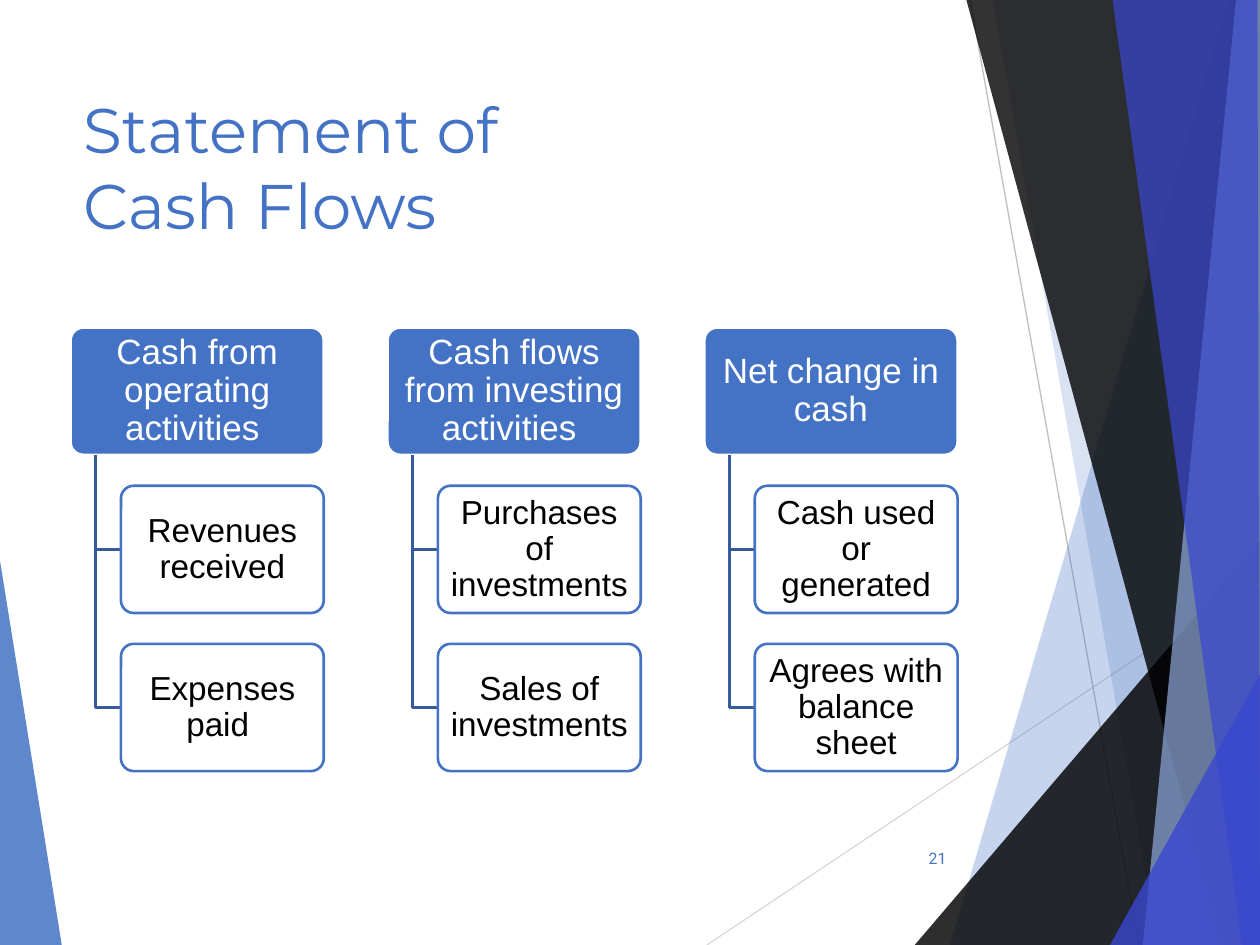
from lxml.etree import SubElement
from pptx import Presentation
from pptx.dml.color import RGBColor
from pptx.enum.shapes import MSO_SHAPE
from pptx.enum.text import MSO_ANCHOR, MSO_AUTO_SIZE, PP_ALIGN
from pptx.oxml.ns import qn
from pptx.util import Inches, Pt

COLORS = {
    "blue": "4472C4", "branch": "365B9D", "pale": "8FAADC", "indigo": "3947CF",
    "black": "000000", "white": "FFFFFF", "gray": "BFBFBF", "light_gray": "D9D9D9",
}

RAYS = [
    (Inches(5.61), Inches(7.5), Inches(10), Inches(4.57), "light_gray"),
    (Inches(7.7), Inches(0), Inches(9.04), Inches(7.5), "gray"),
]

# Corner points in inches, colour and opacity in percent, back to front
FACETS = [
    ([(9.75, 0), (7.54, 7.5), (10, 7.5), (10, 0)], "blue", 30),
    ([(7.88, 0), (9.19, 7.5), (10, 7.5), (10, 0)], "blue", 20),
    ([(7.26, 7.5), (10, 4.29), (10, 7.5)], "black", 82),
    ([(7.67, 0), (9.7, 7.5), (10, 7.5), (10, 0)], "black", 80),
    ([(9.81, 0), (9.07, 7.5), (10, 7.5), (10, 0)], "pale", 70),
    ([(8.83, 0), (9.86, 7.5), (10, 7.5), (9.98, 0)], "indigo", 70),
    ([(8.81, 7.5), (10, 5.35), (10, 7.5)], "indigo", 80),
]
LEFT_FACET = ([(0, 4.45), (0.49, 7.5), (0, 7.5)], "blue", 85)

CASH_FLOWS = [
    ("Cash from operating activities ", ["Revenues received", "Expenses paid "]),
    ("Cash flows from investing activities ",
     ["Purchases of investments", "Sales of investments"]),
    ("Net change in cash", ["Cash used or generated", "Agrees with balance sheet"]),
]


def rgb(name):
    return RGBColor.from_string(COLORS[name])


def fill_solid(shape, color, opacity=100):
    shape.fill.solid()
    shape.fill.fore_color.rgb = rgb(color)
    if opacity < 100:
        srgb = shape.fill._xPr.find(qn("a:solidFill")).find(qn("a:srgbClr"))
        SubElement(srgb, qn("a:alpha")).set("val", str(opacity * 1000))


def set_line(shape, color, width):
    shape.line.color.rgb = rgb(color)
    shape.line.width = Pt(width)


def format_text(paragraph, font_name, size, color, alignment):
    paragraph.alignment = alignment
    for run in paragraph.runs:
        run.font.name = font_name
        run.font.size = Pt(size)
        run.font.color.rgb = rgb(color)


def add_outline(slide, points, close):
    """Add a straight-sided outline through points given as lengths."""
    builder = slide.shapes.build_freeform(*points[0], scale=1.0)
    builder.add_line_segments(points[1:], close=close)
    outline = builder.convert_to_shape()
    outline.shadow.inherit = False
    return outline


def add_facet(slide, corners, color, opacity):
    facet = add_outline(slide, [(Inches(x), Inches(y)) for x, y in corners], True)
    fill_solid(facet, color, opacity)
    facet.line.fill.background()


def add_backdrop(slide):
    add_facet(slide, *LEFT_FACET)
    for x1, y1, x2, y2, color in RAYS:
        ray = slide.shapes.add_connector(1, x1, y1, x2, y2)
        SubElement(ray._element.spPr, qn("a:effectLst"))
        set_line(ray, color, 0.75)
    for facet in FACETS:
        add_facet(slide, *facet)


def add_title(slide, left, top, width, height):
    title = slide.shapes.title
    title.left, title.top, title.width, title.height = left, top, width, height
    frame = title.text_frame
    frame.text = "Statement of \vCash Flows"
    frame.auto_size = MSO_AUTO_SIZE.NONE
    frame.vertical_anchor = MSO_ANCHOR.TOP
    format_text(frame.paragraphs[0], "Montserrat", 36, "blue", PP_ALIGN.LEFT)


def add_page_number(slide, left, top, width, height):
    frame = slide.shapes.add_textbox(left, top, width, height).text_frame
    frame.word_wrap = True
    frame.vertical_anchor = MSO_ANCHOR.MIDDLE
    frame.text = "21"
    frame.paragraphs[0].space_after = Pt(6)
    format_text(frame.paragraphs[0], "Roboto", 9, "blue", PP_ALIGN.RIGHT)


def add_card(slide, text, left, top, width, height, size, text_color):
    card = slide.shapes.add_shape(MSO_SHAPE.ROUNDED_RECTANGLE, left, top, width, height)
    card.shadow.inherit = False
    card.adjustments[0] = 0.1
    frame = card.text_frame
    frame.word_wrap = True
    frame.vertical_anchor = MSO_ANCHOR.MIDDLE
    frame.margin_left = frame.margin_right = Inches(0.07)
    frame.margin_top = frame.margin_bottom = Inches(0.06)
    frame.text = text
    frame.paragraphs[0].line_spacing = 0.9
    format_text(frame.paragraphs[0], "Arial", size, text_color, PP_ALIGN.CENTER)
    return card


def add_branch(slide, left, top, right, bottom):
    """Add the elbow that runs down from a heading and right to an item."""
    branch = add_outline(slide, [(left, top), (left, bottom), (right, bottom)], False)
    branch.fill.background()
    set_line(branch, "branch", 1.5)


def add_activity(slide, heading, items, left, top, width):
    card_height, pitch = Inches(1.01), Inches(1.255)
    indent = Inches(0.4)
    heading_card = add_card(slide, heading, left, top, width, card_height, 20, "white")
    fill_solid(heading_card, "blue")
    set_line(heading_card, "white", 1.5)
    for row, item in enumerate(items, start=1):
        item_top = top + row * pitch
        add_branch(slide, left + indent // 2, top + card_height,
                   left + indent, item_top + card_height // 2)
        item_card = add_card(slide, item, left + indent, item_top,
                             width - indent, card_height, 19, "black")
        fill_solid(item_card, "white", 90)
        set_line(item_card, "blue", 1.5)


def add_hierarchy(slide, left, top, width):
    column_width = Inches(2.01)
    pitch = (width - column_width) // (len(CASH_FLOWS) - 1)
    for column, (heading, items) in enumerate(CASH_FLOWS):
        add_activity(slide, heading, items, left + column * pitch, top, column_width)


def main():
    presentation = Presentation()
    presentation.slide_width = Inches(10)
    presentation.slide_height = Inches(7.5)
    slide = presentation.slides.add_slide(presentation.slide_layouts[5])
    add_backdrop(slide)
    add_title(slide, Inches(0.56), Inches(0.67), Inches(7.05), Inches(1.44))
    add_page_number(slide, Inches(7.05), Inches(6.61), Inches(0.56), Inches(0.4))
    add_hierarchy(slide, Inches(0.56), Inches(2.6), Inches(7.04))
    presentation.save("out.pptx")


if __name__ == "__main__":
    main()
